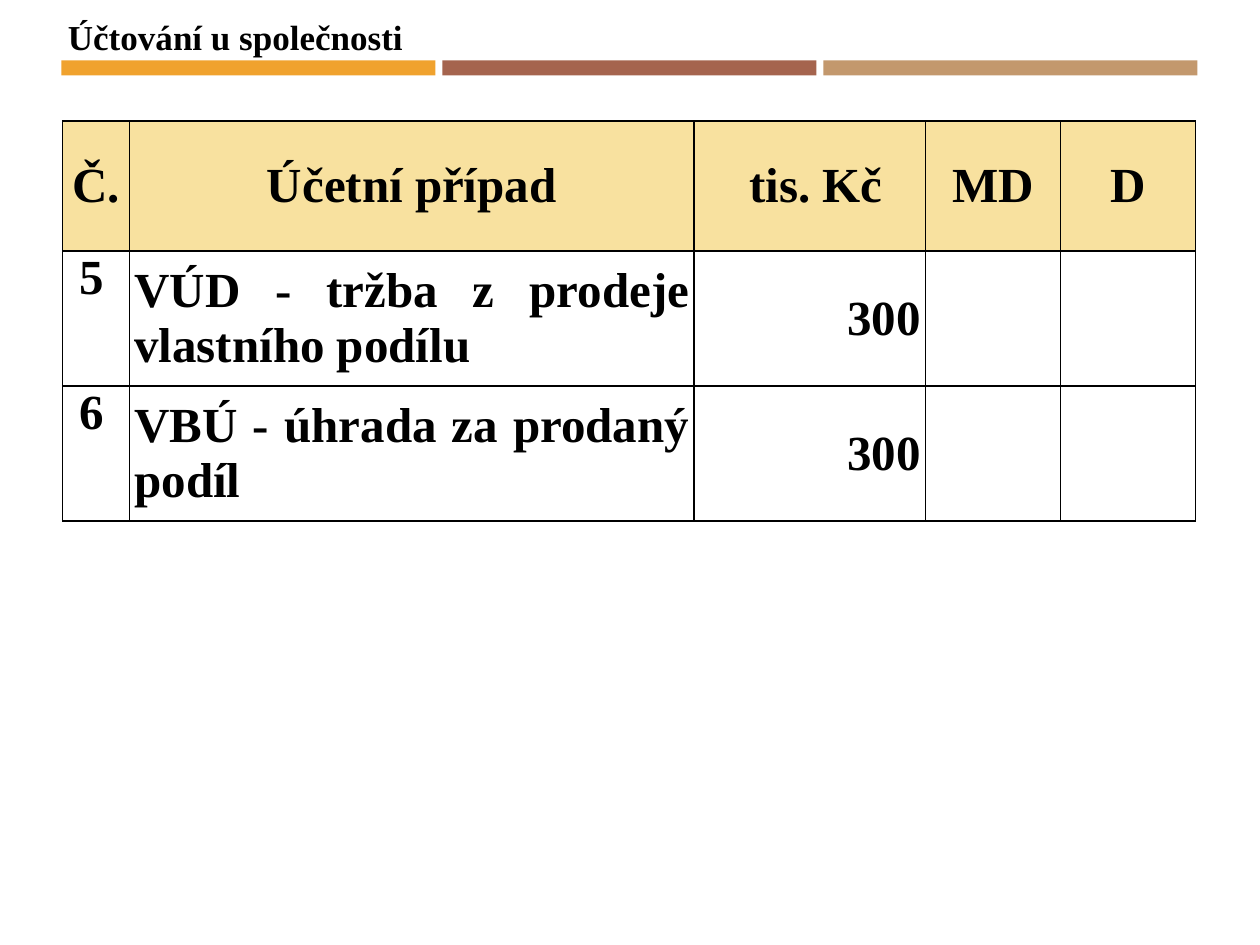
from dataclasses import dataclass

from lxml.etree import SubElement
from pptx import Presentation
from pptx.dml.color import RGBColor
from pptx.enum.shapes import MSO_SHAPE
from pptx.enum.text import MSO_ANCHOR, MSO_AUTO_SIZE, PP_ALIGN
from pptx.oxml.ns import qn
from pptx.util import Cm, Pt


@dataclass(frozen=True)
class Theme:
    font: str = "Times New Roman"
    ink: str = "000000"
    header: str = "F8E19F"
    bars: tuple = ("F0A22E", "A5644E", "C3986D")
    title_size: int = 20
    table_size: int = 28
    border: float = 1


THEME = Theme()
COLUMNS = (1.35, 11.38, 4.67, 2.72, 2.72)
ROW_HEIGHTS = (2.62, 2.72, 2.72)
ROWS = (
    ("Č.", "Účetní případ", " tis. Kč", "MD", "D"),
    (" 5", "VÚD - tržba z prodeje vlastního podílu", "300", "", ""),
    (" 6", "VBÚ - úhrada za prodaný podíl", "300", "", ""),
)
BODY_ALIGN = (PP_ALIGN.LEFT, PP_ALIGN.JUSTIFY, PP_ALIGN.RIGHT, PP_ALIGN.CENTER, PP_ALIGN.CENTER)


def write(tf, text, size=THEME.table_size, align=PP_ALIGN.LEFT, bold=True):
    p = tf.paragraphs[0]
    p.alignment = align
    r = p.add_run()
    r.text = text
    r.font.name = THEME.font
    r.font.size = Pt(size)
    r.font.bold = bold
    r.font.color.rgb = RGBColor.from_string(THEME.ink)


def add_bars(s, left=1.24, top=1.22, width=7.54, height=0.3, gap=0.14):
    for i, color in enumerate(THEME.bars):
        sp = s.shapes.add_shape(
            MSO_SHAPE.RECTANGLE, Cm(left + i * (width + gap)), Cm(top), Cm(width), Cm(height)
        )
        sp.shadow.inherit = False
        sp.fill.solid()
        sp.fill.fore_color.rgb = RGBColor.from_string(color)
        sp.line.fill.background()


def add_title(s, text):
    sp = s.shapes.add_textbox(Cm(1.12), Cm(0.18), Cm(7.32), Cm(1.12))
    tf = sp.text_frame
    tf.word_wrap = False
    tf.auto_size = MSO_AUTO_SIZE.SHAPE_TO_FIT_TEXT
    write(tf, text, size=THEME.title_size)


def add_borders(cell):
    tc_pr = cell._tc.get_or_add_tcPr()
    for side in ("a:lnL", "a:lnR", "a:lnT", "a:lnB"):
        ln = SubElement(tc_pr, qn(side), w=str(Pt(THEME.border)))
        fill = SubElement(ln, qn("a:solidFill"))
        SubElement(fill, qn("a:srgbClr"), val=THEME.ink)


def format_cell(cell, text, align, anchor, fill=None):
    add_borders(cell)
    cell.margin_left = cell.margin_right = Cm(0.1)
    cell.margin_top = cell.margin_bottom = Cm(0)
    cell.vertical_anchor = anchor
    if fill:
        cell.fill.solid()
        cell.fill.fore_color.rgb = RGBColor.from_string(fill)
    else:
        cell.fill.background()
    if text:
        write(cell.text_frame, text, align=align)


def add_entries(s):
    table = s.shapes.add_table(
        len(ROWS), len(COLUMNS), Cm(1.26), Cm(2.44), Cm(sum(COLUMNS)), Cm(sum(ROW_HEIGHTS))
    ).table
    table.first_row = table.horz_banding = False
    for column, width in zip(table.columns, COLUMNS):
        column.width = Cm(width)
    for i, (row, height) in enumerate(zip(table.rows, ROW_HEIGHTS)):
        row.height = Cm(height)
        is_header = i == 0
        for j, text in enumerate(ROWS[i]):
            format_cell(
                table.cell(i, j),
                text,
                align=PP_ALIGN.CENTER if is_header else BODY_ALIGN[j],
                anchor=MSO_ANCHOR.MIDDLE if is_header or j else MSO_ANCHOR.TOP,
                fill=THEME.header if is_header else None,
            )


def main():
    prs = Presentation()
    prs.slide_width, prs.slide_height = Cm(25.4), Cm(19.05)
    s = prs.slides.add_slide(prs.slide_layouts[6])
    add_bars(s)
    add_title(s, "Účtování u společnosti")
    add_entries(s)
    prs.save("out.pptx")


if __name__ == "__main__":
    main()
